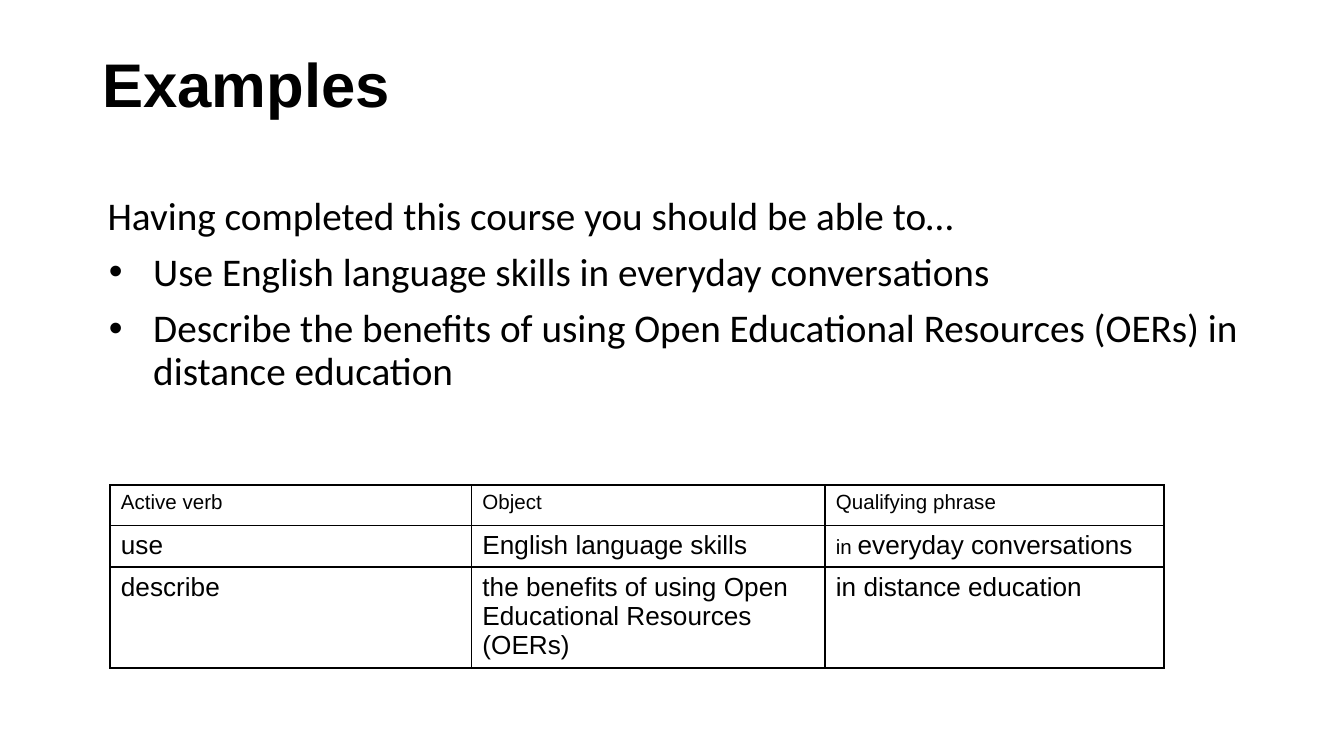
from dataclasses import dataclass

from lxml.etree import SubElement
from pptx import Presentation
from pptx.dml.color import RGBColor
from pptx.enum.text import MSO_ANCHOR, MSO_AUTO_SIZE, PP_ALIGN
from pptx.oxml import parse_xml
from pptx.oxml.ns import nsdecls, qn
from pptx.util import Inches, Pt

# Content
HEADING = "Examples"
INTRO = "Having completed this course you should be able to…"
OUTCOMES = [
    "Use English language skills in everyday conversations",
    "Describe the benefits of using Open Educational Resources (OERs) in distance education",
]
# Each cell is a list of (text, theme size) pairs
OUTCOME_PARTS = [
    [[("Active verb", "small")], [("Object", "small")], [("Qualifying phrase", "small")]],
    [[("use", "cell")], [("English language skills", "cell")],
     [("in ", "small"), ("everyday conversations", "cell")]],
    [[("describe", "cell")],
     [("the benefits of using Open Educational Resources (OERs)", "cell")],
     [("in distance education", "cell")]],
]


@dataclass(frozen=True)
class Theme:
    ink: str = "000000"
    heading_font: str = "Arial"
    body_font: str = "Calibri"
    title: float = 33
    body: float = 21
    cell: float = 14
    small: float = 11
    rule: float = 1
    thin_rule: float = 0.75


THEME = Theme()

# Layout in inches, on a 16:9 slide
WIDTH = 10
HEIGHT = WIDTH * 9 / 16
LEFT, TITLE_TOP, TITLE_HEIGHT, BODY_HEIGHT = 0.69, 0.3, 1.09, 3.57
TEXT_WIDTH = WIDTH - 2 * LEFT
TABLE_LEFT, TABLE_TOP = 0.82, 3.61
COLUMNS, ROWS = [2.69, 2.63, 2.52], [0.3, 0.31, 0.75]


def style(run, size, font, bold=False):
    run.font.size = Pt(size)
    run.font.name = font
    run.font.bold = bold
    run.font.color.rgb = RGBColor.from_string(THEME.ink)


def place(holder, top, height, inset):
    holder.left, holder.top = Inches(LEFT), Inches(top)
    holder.width, holder.height = Inches(TEXT_WIDTH), Inches(height)
    frame = holder.text_frame
    frame.word_wrap = True
    frame.auto_size = MSO_AUTO_SIZE.NONE
    frame.vertical_anchor = MSO_ANCHOR.TOP
    frame.margin_left = frame.margin_right = Inches(0.07)
    frame.margin_top = frame.margin_bottom = Inches(inset)
    return frame


def set_bullet(paragraph, margin, indent, bullet):
    properties = paragraph._p.get_or_add_pPr()
    properties.set("marL", str(Inches(margin)))
    properties.set("indent", str(Inches(indent)))
    if bullet:
        SubElement(properties, qn("a:buFont"), typeface="Arial")
        SubElement(properties, qn("a:buChar"), char=bullet)
    else:
        SubElement(properties, qn("a:buNone"))


def set_borders(cell, widths):
    for position, (side, width) in enumerate(widths.items()):
        cell._tc.get_or_add_tcPr().insert(position, parse_xml(
            f'<a:ln{side} {nsdecls("a")} w="{Pt(width)}"><a:solidFill>'
            f'<a:srgbClr val="{THEME.ink}"/></a:solidFill></a:ln{side}>'))


deck = Presentation()
deck.slide_width, deck.slide_height = Inches(WIDTH), Inches(HEIGHT)
slide = deck.slides.add_slide(deck.slide_layouts[1])

# Title
title_frame = place(slide.shapes.title, TITLE_TOP, TITLE_HEIGHT, 0.04)
title_frame.text = HEADING
title_frame.paragraphs[0].alignment = PP_ALIGN.LEFT
style(title_frame.paragraphs[0].runs[0], THEME.title, THEME.heading_font, bold=True)

# Introduction and outcomes
body_frame = place(slide.placeholders[1], TITLE_TOP + TITLE_HEIGHT, BODY_HEIGHT, 0.07)
body_frame.text = "\n".join([INTRO, *OUTCOMES])
for index, paragraph in enumerate(body_frame.paragraphs):
    paragraph.line_spacing = 0.9
    paragraph.space_before = Pt(7.5)
    set_bullet(paragraph, *((0.38, -0.33, "•") if index else (0.04, 0, None)))
    style(paragraph.runs[0], THEME.body, THEME.body_font)

# Table of outcome parts
table = slide.shapes.add_table(
    len(ROWS), len(COLUMNS), Inches(TABLE_LEFT), Inches(TABLE_TOP),
    Inches(sum(COLUMNS)), Inches(sum(ROWS))).table
table.first_row = table.horz_banding = False
for column, width in zip(table.columns, COLUMNS):
    column.width = Inches(width)
for row, height in zip(table.rows, ROWS):
    row.height = Inches(height)

for row, parts in zip(table.rows, OUTCOME_PARTS):
    for index, (cell, pieces) in enumerate(zip(row.cells, parts)):
        cell.margin_left = cell.margin_right = Inches(0.08)
        cell.margin_top = cell.margin_bottom = Inches(0.04)
        cell.fill.background()
        # The rule after the first column is thinner
        set_borders(cell, {
            "L": THEME.thin_rule if index == 1 else THEME.rule,
            "R": THEME.thin_rule if index == 0 else THEME.rule,
            "T": THEME.rule, "B": THEME.rule})
        for text, size in pieces:
            run = cell.text_frame.paragraphs[0].add_run()
            run.text = text
            style(run, getattr(THEME, size), THEME.heading_font)

deck.save("out.pptx")
